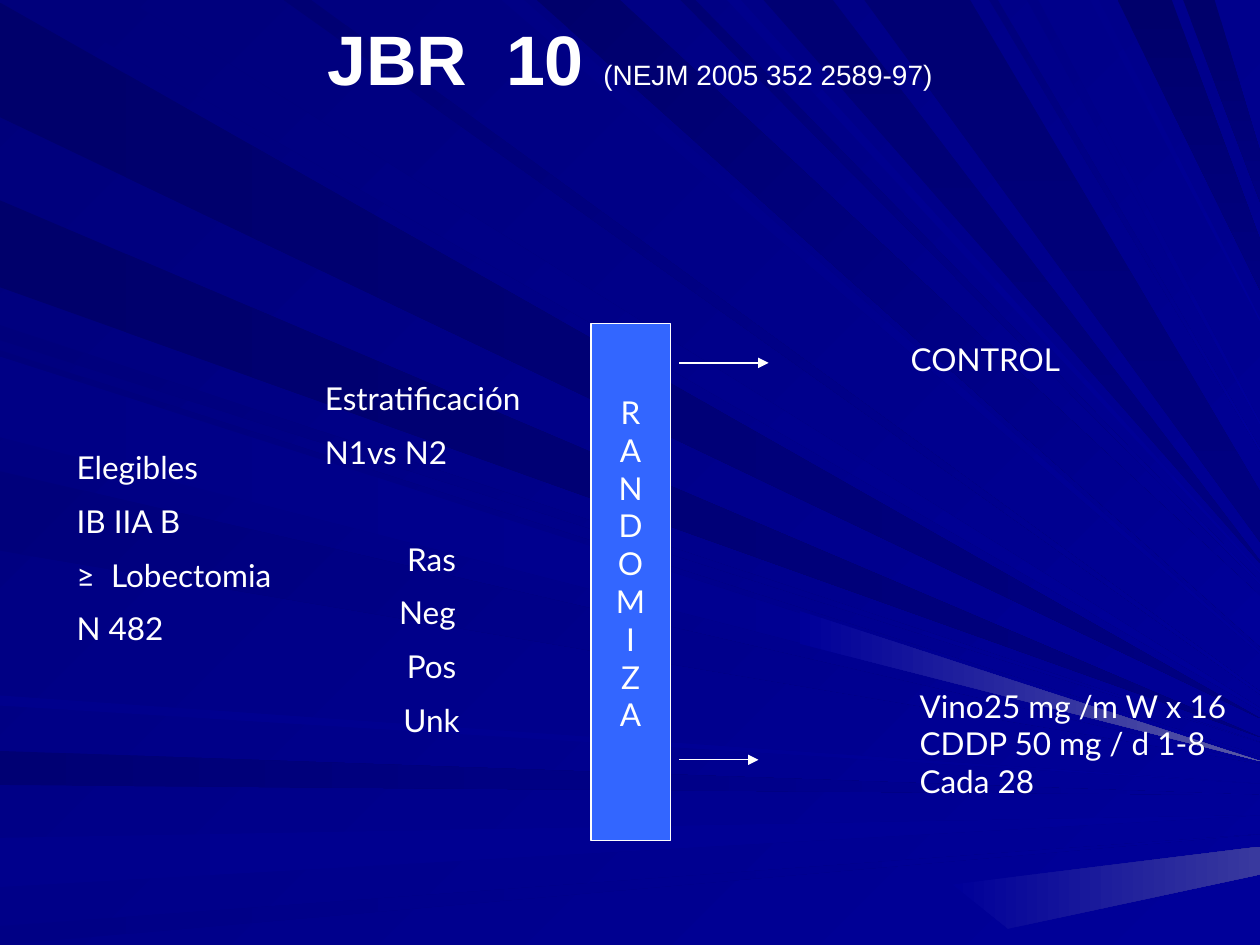
"""Build the JBR 10 trial design slide with its blue ray background."""
import pptx
import pptx.dml.color
import pptx.enum.shapes
import pptx.enum.text
import pptx.util
from lxml import etree
from pptx.oxml.ns import qn
from pptx.util import Inches

COLORS = {"white": "FFFFFF", "bar": "3366FF", "haze": "5A5AA6", "pale": "39399E",
          "ink": "00006B", "deep": "000073", "dark": "00007B", "navy": "000080",
          "mid": "000085", "soft": "00008C", "blue": "000099"}
ALIGN = pptx.enum.text.PP_ALIGN
LINE_GAP = 9
GROUP_GAP = 39.6
WIDTH = 10
HEIGHT = 7.5

LEFT_RAYS = [
    ("ink", "navy", 0, 0.02, 0.93, 5.7),
    ("deep", "blue", 0, 5.96, 6.23, 6.31),
    ("soft", "blue", 0, 6.65, 7.04, 6.47),
    ("mid", "blue", 0, 7.35, 7.5, 6.62),
    ("dark", "blue", 45, 2.58, 2.7, 5.89),
    ("ink", "navy", 0, 1.59, 2.28, 5.85),
    ("dark", "blue", 45, 2.78, 3.42, 6),
    ("dark", "blue", 45, 3.74, 4.37, 6.06),
    ("soft", "blue", 0, 5.52, 5.6, 6.22),
    ("mid", "blue", 0, 2.83, 3.47, 6.04),
]
TOP_RAYS = [
    ("dark", "blue", 45, 0.26, 1.01, 5.63),
    ("mid", "blue", 45, 3.98, 4.16, 5.18),
    ("deep", "blue", 45, 5.4, 5.52, 4.63),
    ("deep", "navy", 90, 6.06, 6.61, 4.46),
    ("deep", "blue", 45, 2.25, 2.47, 5.5),
    ("soft", "blue", 45, 5.77, 5.88, 4.54),
    ("dark", "blue", 45, 7.85, 7.92, 3.57),
    ("mid", "blue", 45, 8.15, 8.24, 3.36),
    ("soft", "blue", 45, 8.65, 8.72, 2.54),
]
TOP_BEAMS = [
    ("ink", "blue", 45, 4.26, 4.92, 4.93),
    ("ink", "navy", 90, 8.87, 9.3, 2.1),
    ("ink", "navy", 90, 9.39, 9.64, 1.4),
    ("deep", "navy", 90, 6.86, 7.7, 4.1),
]


def rgb(name):
    """Return the named colour."""
    return pptx.dml.color.RGBColor.from_string(COLORS[name])


def set_gradient(fill, start, end, angle):
    """Fill with a two-colour gradient turned clockwise by angle."""
    fill.gradient()
    fill.gradient_angle = (360 - angle) % 360
    for stop, name in zip(fill.gradient_stops, (start, end)):
        stop.color.rgb = rgb(name)


def add_ray(group, start, end, angle, corners):
    """Add one gradient polygon without outline."""
    points = [(Inches(x), Inches(y)) for x, y in corners]
    builder = group.shapes.build_freeform(*points[0])
    builder.add_line_segments(points[1:], close=True)
    ray = builder.convert_to_shape()
    set_gradient(ray.fill, start, end, angle)
    ray.line.fill.background()
    ray.shadow.inherit = False


def add_rays(slide):
    """Draw rays from the left and top edges to the right edge, behind the content."""
    group = slide.shapes.add_group_shape()
    for start, end, angle, upper, lower, tip in LEFT_RAYS:
        add_ray(group, start, end, angle, [(0, upper), (0, lower), (WIDTH, tip)])
    for rays, spread in ((TOP_RAYS, 0.02), (TOP_BEAMS, 0.4)):
        for start, end, angle, near, far, tip in rays:
            add_ray(group, start, end, angle,
                    [(near, 0), (far, 0), (WIDTH, tip - spread / 2), (WIDTH, tip + spread / 2)])
    add_ray(group, "blue", "haze", 0, [(6.35, 4.85), (6.35, 5.11), (WIDTH, 6.04)])
    add_ray(group, "blue", "pale", 0,
            [(7.56, 7.02), (8, 7.37), (WIDTH, 6.94), (WIDTH, 6.72)])
    slide.shapes._spTree.insert(2, group._element)


def add_run(paragraph, text, size=18, font="Lato", bold=False):
    """Add one white run to a paragraph."""
    run = paragraph.add_run()
    run.text = text
    run.font.name = font
    run.font.size = pptx.util.Pt(size)
    run.font.bold = bold
    run.font.color.rgb = rgb("white")


def write_lines(frame, lines):
    """Write (text, alignment, space before) lines as paragraphs."""
    for index, (text, alignment, space) in enumerate(lines):
        paragraph = frame.add_paragraph() if index else frame.paragraphs[0]
        paragraph.alignment = alignment
        paragraph.space_before = pptx.util.Pt(space if index else 0)
        add_run(paragraph, text)


def plain(texts, alignment=ALIGN.LEFT, space=0):
    """Give every text the same alignment and space before."""
    return [(text, alignment, space) for text in texts]


def set_title(slide):
    """Place and write the title."""
    title = slide.shapes.title
    title.left, title.top = Inches(0.5), Inches(0)
    title.width, title.height = Inches(9), Inches(0.91)
    frame = title.text_frame
    frame.vertical_anchor = pptx.enum.text.MSO_ANCHOR.MIDDLE
    paragraph = frame.paragraphs[0]
    paragraph.alignment = ALIGN.CENTER
    add_run(paragraph, "JBR  10 ", 40, "Arial", True)
    add_run(paragraph, "(NEJM 2005 352 2589-97)", 16, "Arial")


def add_text(slide, left, top, width, height, lines):
    """Add a wrapping text box."""
    box = slide.shapes.add_textbox(Inches(left), Inches(top), Inches(width), Inches(height))
    box.text_frame.word_wrap = True
    box.text_frame.auto_size = pptx.enum.text.MSO_AUTO_SIZE.SHAPE_TO_FIT_TEXT
    write_lines(box.text_frame, lines)


def add_bar(slide, word):
    """Add the tall bar with its word set one letter a line."""
    bar = slide.shapes.add_shape(pptx.enum.shapes.MSO_SHAPE.RECTANGLE,
                                 Inches(4.69), Inches(2.57), Inches(0.63), Inches(4.1))
    bar.shadow.inherit = False
    bar.fill.solid()
    bar.fill.fore_color.rgb = rgb("bar")
    bar.line.color.rgb = rgb("white")
    bar.line.width = pptx.util.Pt(0.75)
    frame = bar.text_frame
    frame.word_wrap = False
    frame.vertical_anchor = pptx.enum.text.MSO_ANCHOR.MIDDLE
    frame.margin_bottom = Inches(0.35)
    write_lines(frame, plain(word, ALIGN.CENTER))


def add_arrow(slide, left, right, y):
    """Add a horizontal arrow pointing right."""
    arrow = slide.shapes.add_connector(pptx.enum.shapes.MSO_CONNECTOR.STRAIGHT,
                                       Inches(left), Inches(y), Inches(right), Inches(y))
    arrow.line.color.rgb = rgb("white")
    arrow.line.width = pptx.util.Pt(0.75)
    etree.SubElement(arrow.line._get_or_add_ln(), qn("a:tailEnd"), type="triangle")
    etree.SubElement(arrow._element.spPr, qn("a:effectLst"))


def main():
    """Build and save the slide."""
    presentation = pptx.Presentation()
    presentation.slide_width, presentation.slide_height = Inches(WIDTH), Inches(HEIGHT)
    slide = presentation.slides.add_slide(presentation.slide_layouts[5])
    set_gradient(slide.background.fill, "dark", "blue", 45)
    add_rays(slide)
    set_title(slide)
    add_text(slide, 0.51, 3.51, 1.81, 2.68,
             plain(["Elegibles", "IB IIA B", "≥  Lobectomia", "N 482"], space=LINE_GAP))
    add_text(slide, 2.48, 2.96, 1.89, 3.11,
             plain(["Estratificación", "N1vs N2"], space=LINE_GAP)
             + plain(["Ras"], ALIGN.CENTER, GROUP_GAP)
             + plain(["Neg ", "Pos", "Unk"], ALIGN.CENTER, LINE_GAP))
    add_bar(slide, "RANDOMIZA")
    add_text(slide, 7.13, 2.65, 1.83, 0.4, plain(["CONTROL"]))
    add_text(slide, 7.2, 5.4, 2.8, 1,
             plain(["Vino25 mg /m W x 16", "CDDP 50 mg / d 1-8", "Cada 28"]))
    add_arrow(slide, 5.39, 6.1, 2.88)
    add_arrow(slide, 5.39, 6.02, 6.03)
    presentation.save("out.pptx")


if __name__ == "__main__":
    main()
